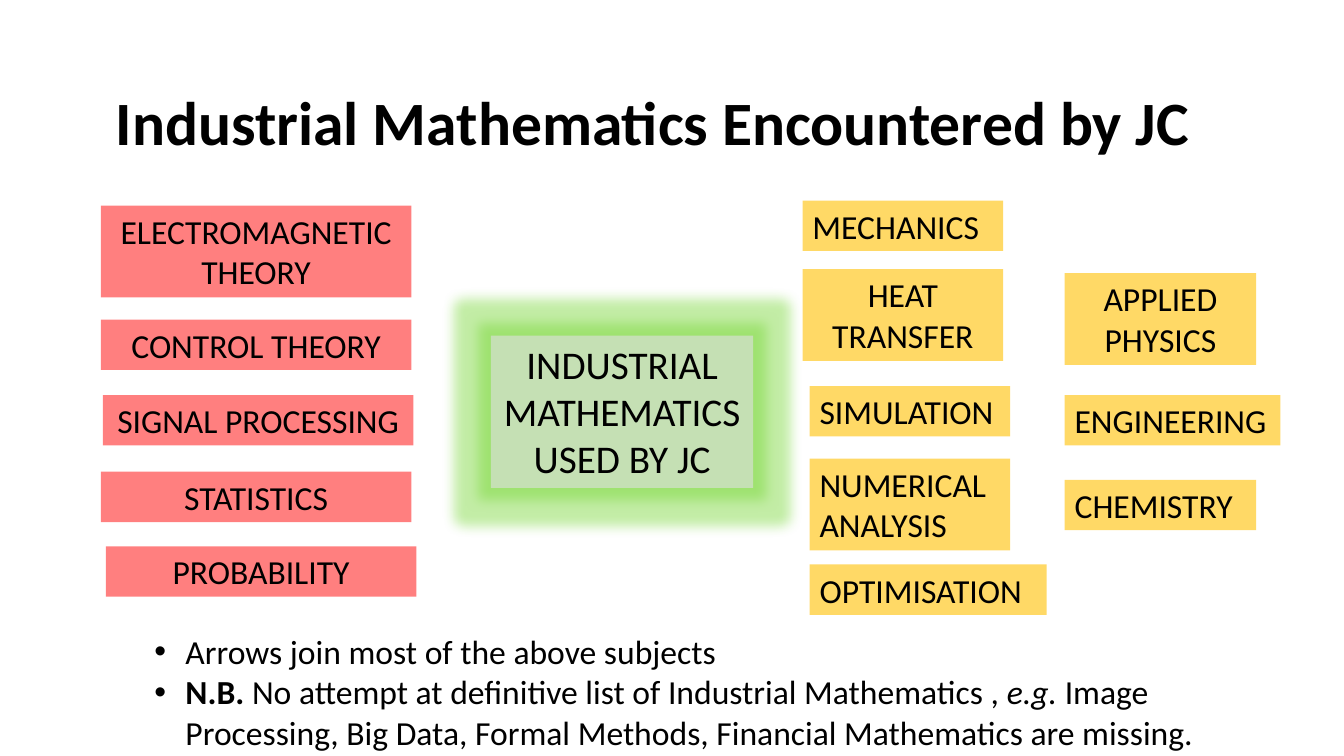
from dataclasses import dataclass

from lxml import etree
from pptx import Presentation
from pptx.dml.color import RGBColor
from pptx.enum.text import MSO_ANCHOR, MSO_AUTO_SIZE, PP_ALIGN
from pptx.oxml.ns import qn
from pptx.util import Pt

PX = 9144  # EMU in one px, 100 px to the inch
FONT = "Calibri"
LEFT, MID = PP_ALIGN.LEFT, PP_ALIGN.CENTER
TOP, CENTRE = MSO_ANCHOR.TOP, MSO_ANCHOR.MIDDLE
FIXED = MSO_AUTO_SIZE.NONE
COLOURS = {"red": "FF0000", "gold": "FFD966", "green": "C5E0B4",
           "glow": "69D321", "ink": "000000"}


@dataclass
class Box:
    text: str
    left: int
    top: int
    width: int
    height: int = 50
    fill: str = "gold"
    align: PP_ALIGN = LEFT
    size: int = 24
    alpha: int = 100


def theory(text: str, left: int, top: int, height: int = 50) -> Box:
    return Box(text, left, top, 308, height, "red", MID, alpha=50)


HUB = Box("INDUSTRIAL MATHEMATICS USED BY JC", 487, 333, 260, 151,
          "green", MID, 28)
BOXES = [
    theory("ELECTROMAGNETIC THEORY", 100, 204, 91),
    theory("CONTROL THEORY", 100, 317),
    theory("SIGNAL PROCESSING", 102, 392),
    theory("STATISTICS", 100, 468),
    theory("PROBABILITY", 105, 542),
    Box("MECHANICS", 796, 199, 199),
    Box("HEAT TRANSFER", 796, 267, 199, 91, align=MID),
    Box("SIMULATION", 803, 383, 199),
    Box("NUMERICAL ANALYSIS", 803, 455, 199, 91),
    Box("OPTIMISATION", 803, 560, 235),
    Box("APPLIED PHYSICS", 1056, 271, 190, 91, align=MID),
    Box("ENGINEERING", 1056, 392, 214),
    Box("CHEMISTRY", 1056, 476, 190),
]
# Each note is a list of (text, bold, italic) runs.
NOTES = [
    [("Arrows join most of the above subjects", False, False)],
    [("N.B. ", True, False),
     ("No attempt at definitive list of Industrial Mathematics , ",
      False, False),
     ("e.g.", False, True),
     (" Image Processing, Big Data, Formal Methods, "
      "Financial Mathematics are missing.", False, False)],
]


def colour(name: str) -> RGBColor:
    return RGBColor.from_string(COLOURS[name])


def place(shape, left: int, top: int, width: int, height: int) -> None:
    shape.left, shape.top = left * PX, top * PX
    shape.width, shape.height = width * PX, height * PX


def style(par, size: int, align: PP_ALIGN = LEFT) -> None:
    par.alignment = align
    par.font.name, par.font.size = FONT, Pt(size)
    par.font.color.rgb = colour("ink")


def fade(node, percent: int) -> None:
    """Set the opacity of a colour element."""
    etree.SubElement(node, qn("a:alpha"), val=str(percent * 1000))


def draw(slide, box: Box):
    shape = slide.shapes.add_textbox(0, 0, 0, 0)
    place(shape, box.left, box.top, box.width, box.height)
    shape.fill.solid()
    shape.fill.fore_color.rgb = colour(box.fill)
    if box.alpha < 100:
        fade(shape.element.spPr.find(".//" + qn("a:srgbClr")), box.alpha)
    frame = shape.text_frame
    frame.word_wrap = True
    frame.text = box.text
    style(frame.paragraphs[0], box.size, box.align)
    return shape


def glow(shape, radius: int) -> None:
    effects = etree.SubElement(shape.element.spPr, qn("a:effectLst"))
    halo = etree.SubElement(effects, qn("a:glow"), rad=str(radius * PX))
    tint = etree.SubElement(halo, qn("a:srgbClr"), val=COLOURS["glow"])
    fade(tint, 40)


def head(shape) -> None:
    place(shape, 105, 52, 1150, 145)
    frame = shape.text_frame
    frame.auto_size, frame.vertical_anchor = FIXED, CENTRE
    frame.text = "Industrial Mathematics Encountered by JC"
    par = frame.paragraphs[0]
    style(par, 44)
    par.font.bold = True
    par.line_spacing = 0.9


def notes(shape) -> None:
    place(shape, 143, 621, 1061, 131)
    frame = shape.text_frame
    frame.auto_size, frame.vertical_anchor = FIXED, TOP
    for i, runs in enumerate(NOTES):
        par = frame.add_paragraph() if i else frame.paragraphs[0]
        style(par, 24)
        par.space_before = Pt(0)
        props = par._p.get_or_add_pPr()
        props.set("marL", str(31 * PX))
        props.set("indent", str(-31 * PX))
        etree.SubElement(props, qn("a:buFont"), typeface="Arial")
        etree.SubElement(props, qn("a:buChar"), char="•")
        # The schema wants default run properties after the bullet.
        props.append(props.find(qn("a:defRPr")))
        for text, bold, italic in runs:
            run = par.add_run()
            run.text = text
            run.font.bold, run.font.italic = bold, italic


def main() -> None:
    deck = Presentation()
    deck.slide_width, deck.slide_height = 1333 * PX, 750 * PX
    slide = deck.slides.add_slide(deck.slide_layouts[1])
    head(slide.shapes.title)
    notes(slide.placeholders[1])
    glow(draw(slide, HUB), 25)
    for box in BOXES:
        draw(slide, box)
    deck.save("out.pptx")


if __name__ == "__main__":
    main()
